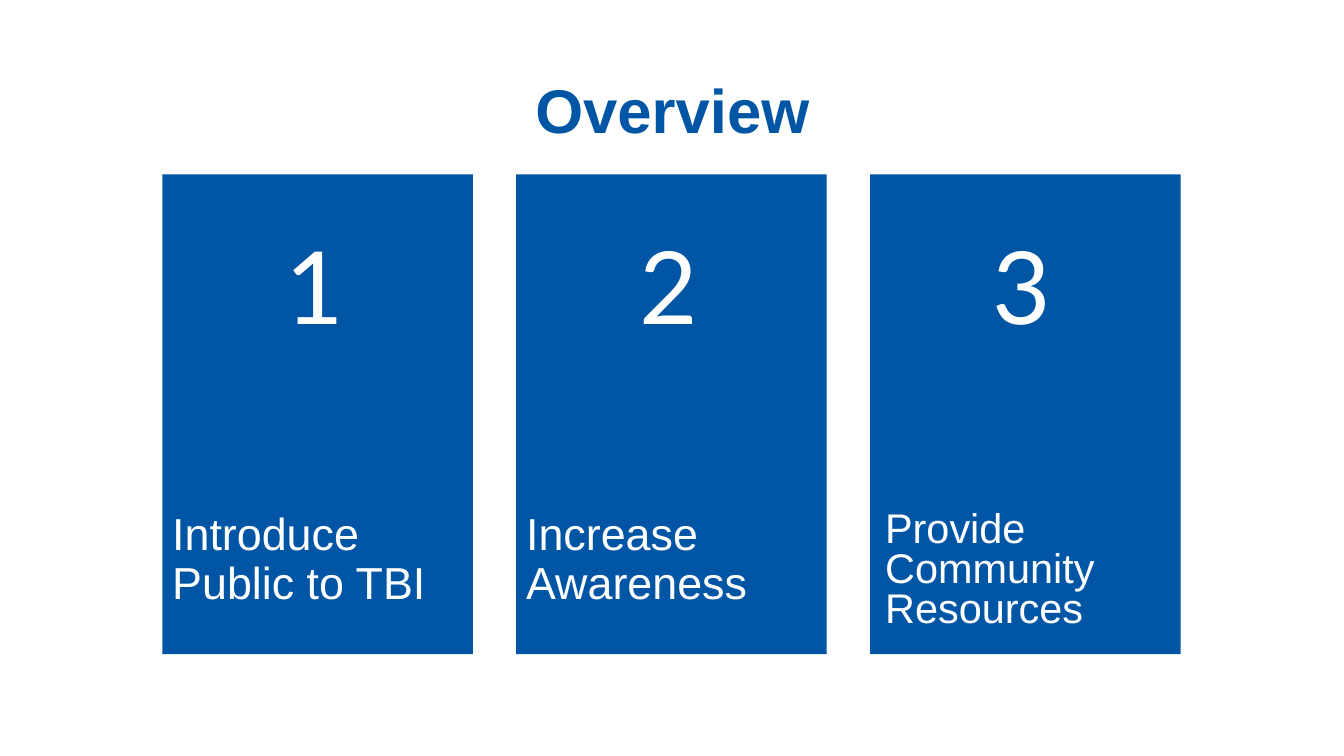
from dataclasses import dataclass

from pptx import Presentation
from pptx.dml.color import RGBColor
from pptx.enum.shapes import MSO_SHAPE
from pptx.enum.text import MSO_ANCHOR, PP_ALIGN
from pptx.util import Inches, Pt


@dataclass(frozen=True)
class Theme:
    """Colours, fonts and type sizes of the slide."""
    blue: RGBColor = RGBColor(0x00, 0x55, 0xA5)
    white: RGBColor = RGBColor(0xFF, 0xFF, 0xFF)
    text_font: str = "Arial"
    number_font: str = "Lato"
    title_size: float = 44
    number_size: float = 72
    label_size: float = 32
    small_label_size: float = 29.6


THEME = Theme()
CARD_LEFT, CARD_TOP, CARD_WIDTH, CARD_HEIGHT = 1.61, 1.73, 3.08, 4.76
CARD_PITCH = 3.51
NUMBER_TOP, NUMBER_WIDTH, NUMBER_HEIGHT = 2.31, 0.84, 1.13
LABEL_TOP, LABEL_HEIGHT = 5.03, 1.32
CARDS = [
    ("Introduce Public to TBI", THEME.label_size, 0.9, 0),
    ("Increase Awareness", THEME.label_size, 0.9, 0),
    ("Provide Community Resources", THEME.small_label_size, 0.8, 0.05),
]


def write(tf, text, font, size, color, spacing=0.9, bold=False):
    """Fill the first paragraph of a text frame with one styled run."""
    tf.word_wrap = True
    p = tf.paragraphs[0]
    p.line_spacing = spacing
    r = p.add_run()
    r.text = text
    r.font.name, r.font.size, r.font.bold = font, Pt(size), bold
    r.font.color.rgb = color
    return p


def add_title(s, text):
    """Place and format the title placeholder."""
    sp = s.shapes.title
    sp.left, sp.top, sp.width, sp.height = map(Inches, (0.92, 0.4, 11.5, 1.45))
    tf = sp.text_frame
    tf.vertical_anchor = MSO_ANCHOR.MIDDLE
    p = write(tf, text, THEME.text_font, THEME.title_size, THEME.blue, bold=True)
    p.alignment = PP_ALIGN.CENTER


def add_panel(s, left):
    """Draw the blue panel of a card."""
    box = map(Inches, (left, CARD_TOP, CARD_WIDTH, CARD_HEIGHT))
    sp = s.shapes.add_shape(MSO_SHAPE.RECTANGLE, *box)
    sp.shadow.inherit = False
    sp.fill.solid()
    sp.fill.fore_color.rgb = THEME.blue
    sp.line.fill.background()


def add_text(s, box, *style):
    """Add a text box holding one styled run."""
    sp = s.shapes.add_textbox(*map(Inches, box))
    write(sp.text_frame, *style)


def add_card(s, column, label, size, spacing, shift):
    """Add one numbered card in the given column."""
    left = CARD_LEFT + column * CARD_PITCH
    number_left = left + (CARD_WIDTH - NUMBER_WIDTH) / 2
    add_panel(s, left)
    add_text(s, (number_left, NUMBER_TOP, NUMBER_WIDTH, NUMBER_HEIGHT),
             str(column + 1), THEME.number_font, THEME.number_size, THEME.white)
    add_text(s, (left + shift, LABEL_TOP, CARD_WIDTH, LABEL_HEIGHT),
             label, THEME.text_font, size, THEME.white, spacing)


def main():
    """Build the overview slide and save it."""
    prs = Presentation()
    prs.slide_width, prs.slide_height = Inches(13.33), Inches(7.5)
    s = prs.slides.add_slide(prs.slide_layouts[5])
    add_title(s, "Overview")
    for column, card in enumerate(CARDS):
        add_card(s, column, *card)
    prs.save("out.pptx")


if __name__ == "__main__":
    main()
